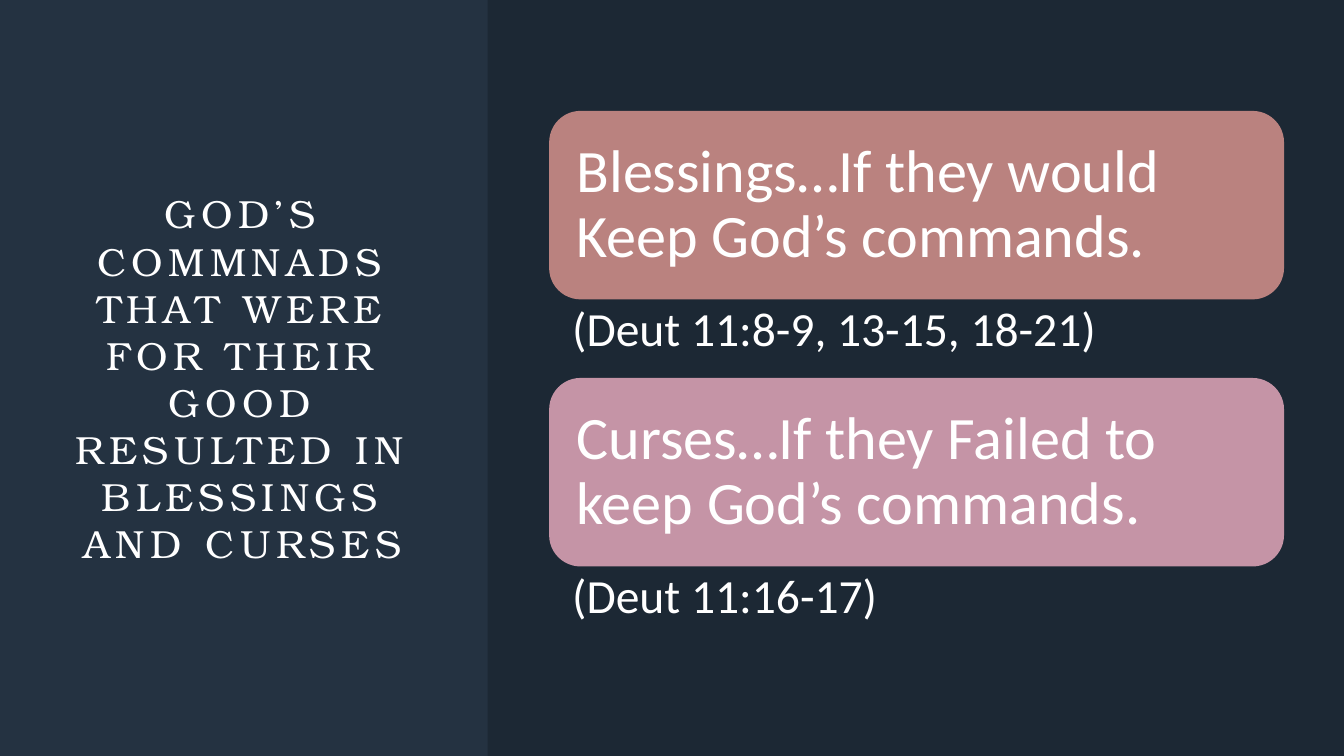
import pptx
import pptx.dml.color
import pptx.enum.shapes
import pptx.enum.text
import pptx.oxml
import pptx.oxml.ns
import pptx.util

Cm, Pt = pptx.util.Cm, pptx.util.Pt
ALIGN = pptx.enum.text.PP_ALIGN
ANCHOR = pptx.enum.text.MSO_ANCHOR
SHAPE = pptx.enum.shapes.MSO_SHAPE

TITLE = "GOD’S COMMNADS THAT WERE FOR THEIR GOOD RESULTED IN BLESSINGS AND CURSES"
OUTCOMES = [
    ("Blessings…If they would Keep God’s commands.", "(Deut 11:8-9, 13-15, 18-21)", "blessing"),
    ("Curses…If they Failed to keep God’s commands.", "(Deut 11:16-17)", "curse"),
]
COLORS = {
    "background": "243241",
    "panel": "000000",
    "blessing": "BA827F",
    "curse": "C594A6",
    "text": "FFFFFF",
}
PANEL_OPACITY = 20  # percent
TITLE_TRACKING = 4  # points

SLIDE_WIDTH, SLIDE_HEIGHT = 33.87, 19.05
PANEL_LEFT = 12.29
TITLE_LEFT, TITLE_WIDTH, TITLE_HEIGHT = 1.5, 9.22, 13.03
CARD_LEFT, CARD_WIDTH, CARD_HEIGHT = 13.84, 18.52, 4.75
VERSE_HEIGHT = 1.98

# Insets: left, top, right, bottom
TITLE_STYLE = {"font": "TeX Gyre Bonum", "size": 28, "align": ALIGN.CENTER,
               "anchor": ANCHOR.MIDDLE, "spacing": 1.0, "insets": (0, 0, 0, 0)}
CARD_STYLE = {"font": "Calibri", "size": 43, "align": ALIGN.LEFT,
              "anchor": ANCHOR.MIDDLE, "spacing": 0.9, "insets": (0.46, 0.46, 0.46, 0.46)}
VERSE_STYLE = {"font": "Calibri", "size": 34, "align": ALIGN.LEFT,
               "anchor": ANCHOR.TOP, "spacing": 0.9, "insets": (0.58, 0.15, 0.84, 0.15)}


def rgb(name):
    return pptx.dml.color.RGBColor.from_string(COLORS[name])


def set_attributes(target, values):
    for name, value in values.items():
        setattr(target, name, value)


def write(shape, text, style):
    """Put one formatted paragraph into the shape and return its run."""
    frame = shape.text_frame
    left, top, right, bottom = (Cm(inset) for inset in style["insets"])
    set_attributes(frame, {
        "word_wrap": True, "auto_size": pptx.enum.text.MSO_AUTO_SIZE.NONE,
        "vertical_anchor": style["anchor"], "margin_left": left, "margin_top": top,
        "margin_right": right, "margin_bottom": bottom})
    paragraph = frame.paragraphs[0]
    set_attributes(paragraph, {"alignment": style["align"], "line_spacing": style["spacing"]})
    run = paragraph.add_run()
    run.text = text
    set_attributes(run.font, {"name": style["font"], "size": Pt(style["size"]), "bold": False})
    run.font.color.rgb = rgb("text")
    return run


def add_filled_shape(slide, kind, box, color):
    shape = slide.shapes.add_shape(kind, *(Cm(length) for length in box))
    shape.shadow.inherit = False
    shape.fill.solid()
    shape.fill.fore_color.rgb = rgb(color)
    shape.line.fill.background()
    return shape


def add_title(slide):
    title = slide.shapes.title
    set_attributes(title, {
        "left": Cm(TITLE_LEFT), "top": Cm((SLIDE_HEIGHT - TITLE_HEIGHT) / 2),
        "width": Cm(TITLE_WIDTH), "height": Cm(TITLE_HEIGHT)})
    run = write(title, TITLE, TITLE_STYLE)
    run.font._element.set("spc", str(TITLE_TRACKING * 100))


def add_panel(slide):
    box = (PANEL_LEFT, 0, SLIDE_WIDTH - PANEL_LEFT, SLIDE_HEIGHT)
    panel = add_filled_shape(slide, SHAPE.RECTANGLE, box, "panel")
    color = panel._element.spPr.find(".//" + pptx.oxml.ns.qn("a:srgbClr"))
    alpha = pptx.oxml.parse_xml(
        f'<a:alpha {pptx.oxml.ns.nsdecls("a")} val="{PANEL_OPACITY * 1000}"/>')
    color.append(alpha)


def add_outcomes(slide):
    """Stack each card over its verses, centred on the slide's height."""
    pitch = CARD_HEIGHT + VERSE_HEIGHT
    first_top = (SLIDE_HEIGHT - pitch * len(OUTCOMES)) / 2
    for index, (statement, verses, color) in enumerate(OUTCOMES):
        top = first_top + index * pitch
        card = add_filled_shape(
            slide, SHAPE.ROUNDED_RECTANGLE, (CARD_LEFT, top, CARD_WIDTH, CARD_HEIGHT), color)
        write(card, statement, CARD_STYLE)
        verse_box = slide.shapes.add_textbox(
            Cm(CARD_LEFT), Cm(top + CARD_HEIGHT), Cm(CARD_WIDTH), Cm(VERSE_HEIGHT))
        write(verse_box, verses, VERSE_STYLE)


def main():
    presentation = pptx.Presentation()
    set_attributes(presentation, {
        "slide_width": Cm(SLIDE_WIDTH), "slide_height": Cm(SLIDE_HEIGHT)})
    title_only = presentation.slide_layouts.get_by_name("Title Only")
    slide = presentation.slides.add_slide(title_only)
    slide.background.fill.solid()
    slide.background.fill.fore_color.rgb = rgb("background")
    add_title(slide)
    add_panel(slide)
    add_outcomes(slide)
    presentation.save("out.pptx")


if __name__ == "__main__":
    main()
